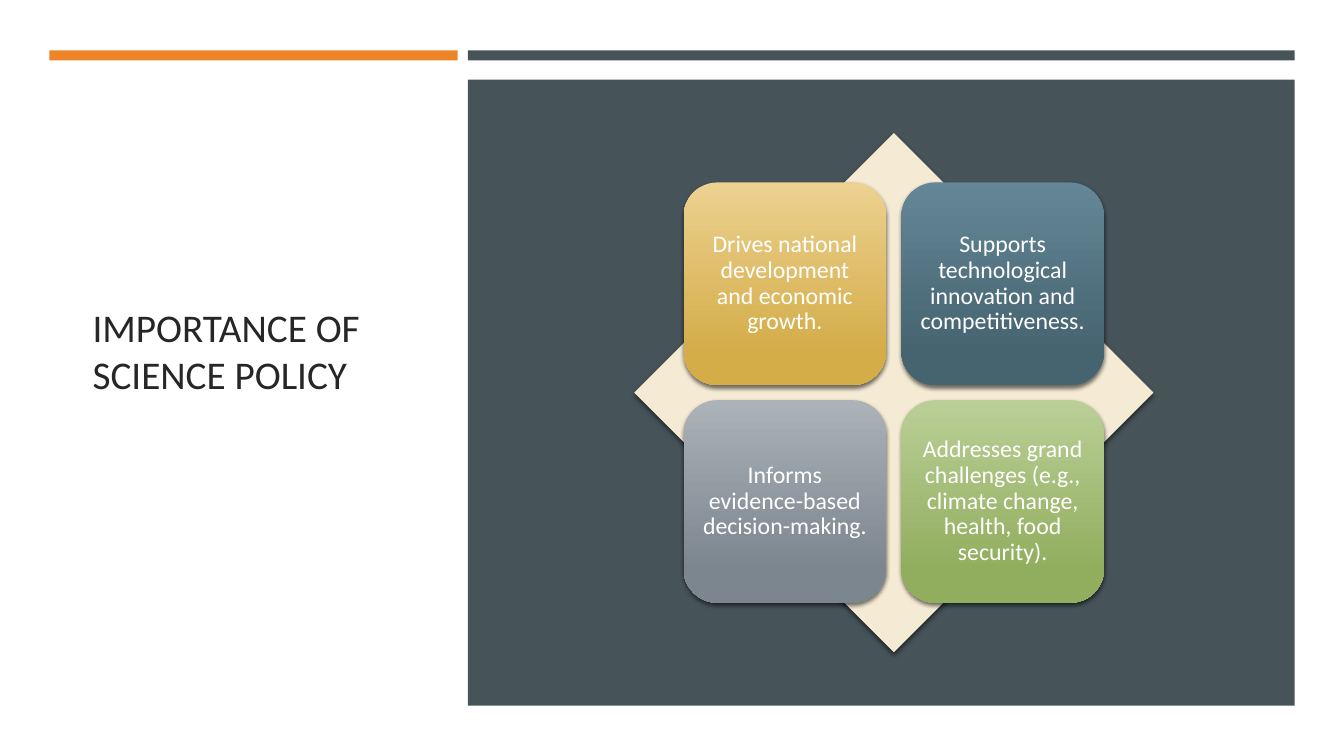
from lxml import etree
from pptx import Presentation
from pptx.dml.color import RGBColor
from pptx.enum.shapes import MSO_SHAPE
from pptx.enum.text import MSO_ANCHOR, PP_ALIGN
from pptx.oxml.ns import qn
from pptx.util import Inches, Pt

RECTANGLE = MSO_SHAPE.RECTANGLE
DIAMOND = MSO_SHAPE.DIAMOND
ROUNDED = MSO_SHAPE.ROUNDED_RECTANGLE
MIDDLE = MSO_ANCHOR.MIDDLE
LEFT, CENTER = PP_ALIGN.LEFT, PP_ALIGN.CENTER

FONT = "Calibri"
WHITE = RGBColor(0xFF, 0xFF, 0xFF)
INK = RGBColor(0x26, 0x26, 0x26)
ORANGE = RGBColor(0xED, 0x84, 0x28)
SLATE = RGBColor(0x46, 0x53, 0x59)
CREAM = RGBColor(0xF5, 0xEA, 0xD4)
GOLD = RGBColor(0xEC, 0xD1, 0x90), RGBColor(0xD4, 0xAD, 0x49)
BLUE = RGBColor(0x64, 0x87, 0x97), RGBColor(0x46, 0x63, 0x70)
GREY = RGBColor(0xAB, 0xB2, 0xB8), RGBColor(0x7C, 0x86, 0x8F)
GREEN = RGBColor(0xBA, 0xCF, 0x97), RGBColor(0x91, 0xAE, 0x5E)

# Lengths in inches
PANEL_LEFT, PANEL_WIDTH = 4.64, 8.2
BAR_TOP, BAR_HEIGHT = 0.5, 0.1
DIAMOND_LEFT, DIAMOND_TOP, DIAMOND_SIZE = 6.29, 1.32, 5.15
CARD_SIZE, CARD_PITCH, CARD_OFFSET = 2.01, 2.16, 0.49
CARD_MARGIN = 0.07

CARDS = [
    ("Drives national development and economic growth.", GOLD),
    ("Supports technological innovation and competitiveness.", BLUE),
    ("Informs evidence-based decision-making.", GREY),
    ("Addresses grand challenges (e.g., climate change, health, food security).", GREEN),
]


def add_block(slide, kind, left, top, width, height, color=None):
    shape = slide.shapes.add_shape(
        kind, Inches(left), Inches(top), Inches(width), Inches(height))
    shape.shadow.inherit = False
    shape.line.fill.background()
    if color is not None:
        shape.fill.solid()
        shape.fill.fore_color.rgb = color
    return shape


def add_shadow(shape):
    effects = shape._element.spPr.find(qn("a:effectLst"))
    shadow = etree.SubElement(
        effects, qn("a:outerShdw"), blurRad=str(Pt(3)), dist=str(Pt(2)),
        dir="5400000", algn="ctr", rotWithShape="0")
    color = etree.SubElement(shadow, qn("a:srgbClr"), val="000000")
    etree.SubElement(color, qn("a:alpha"), val="55000")


def write_text(shape, text, size, color, alignment):
    frame = shape.text_frame
    frame.word_wrap = True
    frame.vertical_anchor = MIDDLE
    frame.text = text
    paragraph = frame.paragraphs[0]
    paragraph.alignment = alignment
    font = paragraph.runs[0].font
    font.name, font.size, font.color.rgb = FONT, Pt(size), color
    return frame


def add_title(slide):
    box = slide.shapes.add_textbox(
        Inches(0.82), Inches(1.14), Inches(3.34), Inches(5.15))
    frame = write_text(box, "IMPORTANCE OF SCIENCE POLICY", 28, INK, LEFT)
    # The title sits half a line above the middle
    frame.margin_bottom = Inches(0.52)


def add_card(slide, row, column, text, colors):
    card = add_block(
        slide, ROUNDED,
        DIAMOND_LEFT + CARD_OFFSET + column * CARD_PITCH,
        DIAMOND_TOP + CARD_OFFSET + row * CARD_PITCH,
        CARD_SIZE, CARD_SIZE)
    card.fill.gradient()
    card.fill.gradient_angle = 270
    for stop, position, color in zip(card.fill.gradient_stops, (0, 0.84), colors):
        stop.position = position
        stop.color.rgb = color
    add_shadow(card)
    # The rounded corners already inset the text by about 0.1 inch
    frame = write_text(card, text, 17, WHITE, CENTER)
    frame.margin_left = frame.margin_right = Inches(CARD_MARGIN)
    frame.margin_top = frame.margin_bottom = Inches(CARD_MARGIN)
    frame.paragraphs[0].line_spacing = 0.9


def main():
    presentation = Presentation()
    presentation.slide_width = Inches(13.33)
    presentation.slide_height = Inches(7.5)
    slide = presentation.slides.add_slide(presentation.slide_layouts[6])
    slide.background.fill.solid()
    slide.background.fill.fore_color.rgb = WHITE

    # Title, top bars and dark panel
    add_title(slide)
    add_block(slide, RECTANGLE, 0.49, BAR_TOP, 4.05, BAR_HEIGHT, ORANGE)
    add_block(slide, RECTANGLE, PANEL_LEFT, BAR_TOP, PANEL_WIDTH, BAR_HEIGHT, SLATE)
    add_block(slide, RECTANGLE, PANEL_LEFT, 0.79, PANEL_WIDTH, 6.21, SLATE)

    # Diamond with a two by two grid of cards
    diamond = add_block(slide, DIAMOND, DIAMOND_LEFT, DIAMOND_TOP,
                        DIAMOND_SIZE, DIAMOND_SIZE, CREAM)
    add_shadow(diamond)
    for index, (text, colors) in enumerate(CARDS):
        row, column = divmod(index, 2)
        add_card(slide, row, column, text, colors)

    presentation.save("out.pptx")


if __name__ == "__main__":
    main()
